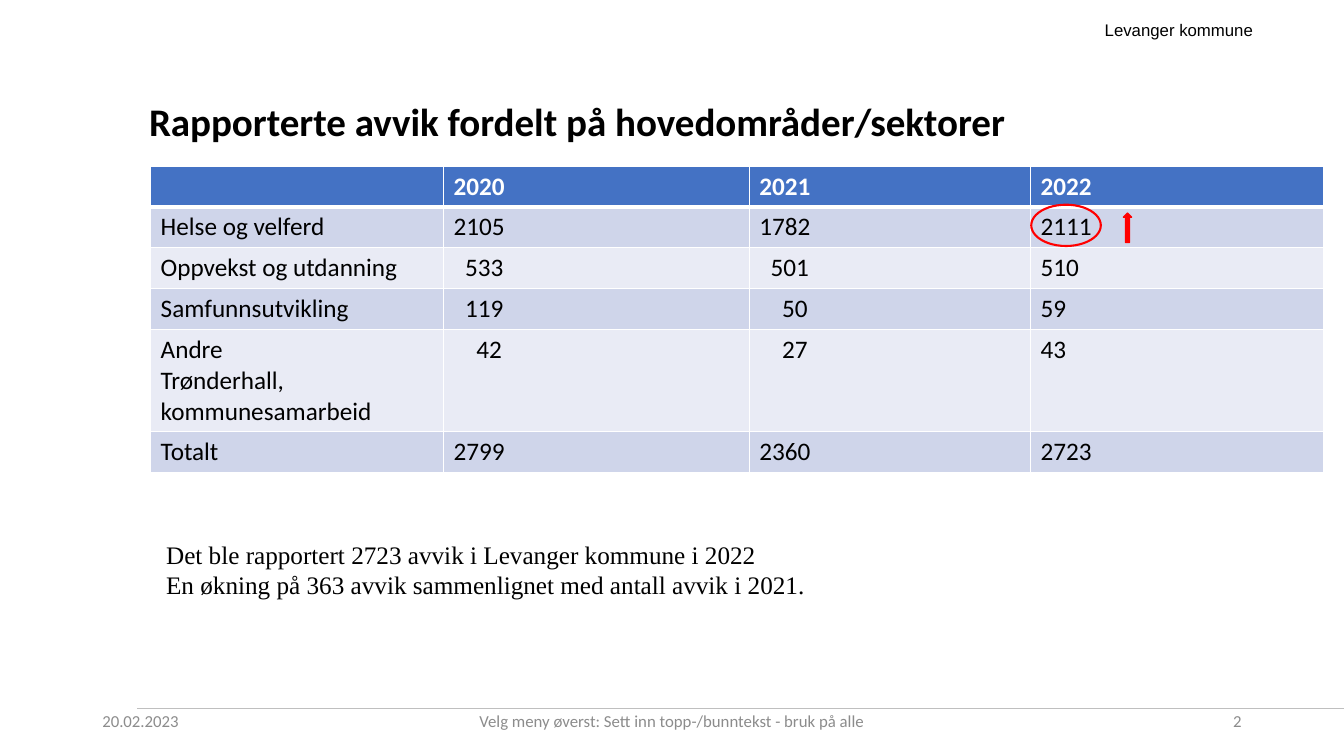
from dataclasses import dataclass

from lxml import etree
from pptx import Presentation
from pptx import util as u
from pptx.dml import color
from pptx.enum import shapes, text
from pptx.oxml import ns


@dataclass(frozen=True)
class Theme:
    black: str = "000000"
    white: str = "FFFFFF"
    header: str = "4472C4"
    bands: tuple[str, str] = ("CFD5EA", "E9EBF5")
    rule: str = "BFBFBF"
    footer: str = "8C8C8C"
    accent: str = "FF0000"
    title_size: float = 27.9
    body_size: float = 18
    small_size: float = 12


THEME = Theme()


@dataclass(frozen=True)
class Style:
    size: float
    ink: str = THEME.black
    font: str = "Calibri"
    bold: bool = False


@dataclass(frozen=True)
class TextBox:
    lines: tuple[str, ...]
    box: tuple[float, float, float, float]
    style: Style
    align: text.PP_ALIGN = text.PP_ALIGN.LEFT
    anchor: text.MSO_ANCHOR = text.MSO_ANCHOR.TOP
    inset_y: float = 3.6
    spacing: float = 1.0


@dataclass(frozen=True)
class Marker:
    kind: shapes.MSO_SHAPE
    box: tuple[float, float, float, float]
    line_width: float
    filled: bool = False
    rotation: float = 0


@dataclass(frozen=True)
class Row:
    label: tuple[str, ...]
    values: tuple[str, str, str]
    height: float = 29.2


def points(values):
    return [u.Pt(value) for value in values]


def rgb(code: str) -> color.RGBColor:
    return color.RGBColor.from_string(code)


def write(frame, lines: tuple[str, ...], style: Style, align=text.PP_ALIGN.LEFT, spacing: float = 1.0) -> None:
    for index, line in enumerate(lines):
        paragraph = frame.add_paragraph() if index else frame.paragraphs[0]
        paragraph.alignment = align
        paragraph.line_spacing = spacing
        run = paragraph.add_run()
        run.text = line
        run.font.name = style.font
        run.font.size = u.Pt(style.size)
        run.font.bold = style.bold
        run.font.color.rgb = rgb(style.ink)


def add_text(slide, item: TextBox) -> None:
    frame = slide.shapes.add_textbox(*points(item.box)).text_frame
    frame.word_wrap = True
    frame.vertical_anchor = item.anchor
    frame.margin_top = frame.margin_bottom = u.Pt(item.inset_y)
    write(frame, item.lines, item.style, item.align, item.spacing)


def add_marker(slide, marker: Marker) -> None:
    shape = slide.shapes.add_shape(marker.kind, *points(marker.box))
    shape.shadow.inherit = False
    shape.rotation = marker.rotation
    shape.line.color.rgb = rgb(THEME.accent)
    shape.line.width = u.Pt(marker.line_width)
    if marker.filled:
        shape.fill.solid()
        shape.fill.fore_color.rgb = rgb(THEME.accent)
    else:
        shape.fill.background()


def set_borders(cell, top: float, bottom: float) -> None:
    properties = cell._tc.get_or_add_tcPr()
    widths = {"lnL": 1, "lnR": 1, "lnT": top, "lnB": bottom}
    for index, (side, width) in enumerate(widths.items()):
        line = etree.Element(ns.qn(f"a:{side}"), w=str(u.Pt(width)))
        fill = etree.SubElement(line, ns.qn("a:solidFill"))
        etree.SubElement(fill, ns.qn("a:srgbClr"), val=THEME.white)
        properties.insert(index, line)


def add_deviation_table(slide, left: float, top: float, columns: tuple[float, ...], rows: tuple[Row, ...]) -> None:
    heights = [row.height for row in rows]
    table = slide.shapes.add_table(
        len(rows), len(columns), *points((left, top, sum(columns), sum(heights)))).table
    for column, width in zip(table.columns, columns):
        column.width = u.Pt(width)
    digit_width = 4.07
    for row_index, row in enumerate(rows):
        table.rows[row_index].height = u.Pt(row.height)
        header = row_index == 0
        style = Style(THEME.body_size, THEME.white if header else THEME.black, bold=header)
        for column_index, lines in enumerate((row.label, *((value,) for value in row.values))):
            cell = table.cell(row_index, column_index)
            cell.fill.solid()
            cell.fill.fore_color.rgb = rgb(THEME.header if header else THEME.bands[(row_index - 1) % 2])
            set_borders(cell, top=3 if row_index == 1 else 1, bottom=3 if header else 1)
            # Shorter numbers in the first two years are indented two spaces per missing digit
            missing = 4 - len(lines[0]) if column_index in (1, 2) else 0
            cell.margin_left = u.Pt(7.2 + 2 * missing * digit_width)
            write(cell.text_frame, lines, style)


def add_rule(slide, left: float, right: float, y: float) -> None:
    rule = slide.shapes.add_connector(shapes.MSO_CONNECTOR.STRAIGHT, *points((left, y, right, y)))
    rule.line.color.rgb = rgb(THEME.rule)
    rule.line.width = u.Pt(0.25)
    etree.SubElement(rule._element.spPr, ns.qn("a:effectLst"))


SMALL = Style(THEME.small_size, THEME.footer)
MIDDLE = text.MSO_ANCHOR.MIDDLE
FOOTER_TOP, FOOTER_HEIGHT = 500.4, 28.8

HEADINGS = (
    TextBox(("Levanger kommune",), (782, 14.2, 173.5, 30), Style(THEME.small_size, font="Arial"), inset_y=0),
    TextBox(("Rapporterte avvik fordelt på hovedområder/sektorer",), (99.4, 35.3, 810.7, 68),
            Style(THEME.title_size, bold=True), anchor=text.MSO_ANCHOR.BOTTOM, inset_y=0, spacing=0.9),
)
ROWS = (
    Row((), ("2020", "2021", "2022")),
    Row(("Helse og velferd",), ("2105", "1782", "2111")),
    Row(("Oppvekst og utdanning",), ("533", "501", "510")),
    Row(("Samfunnsutvikling",), ("119", "50", "59")),
    Row(("Andre", "Trønderhall, kommunesamarbeid"), ("42", "27", "43"), 73.1),
    Row(("Totalt",), ("2799", "2360", "2723")),
)
FOOTERS = (
    TextBox(("20.02.2023",), (66, FOOTER_TOP, 216, FOOTER_HEIGHT), SMALL, anchor=MIDDLE),
    TextBox(("Velg meny øverst: Sett inn topp-/bunntekst - bruk på alle",),
            (318, FOOTER_TOP, 324, FOOTER_HEIGHT), SMALL, text.PP_ALIGN.CENTER, MIDDLE),
    TextBox(("2",), (678, FOOTER_TOP, 216, FOOTER_HEIGHT), SMALL, text.PP_ALIGN.RIGHT, MIDDLE),
)
MARKERS = (
    Marker(shapes.MSO_SHAPE.RIGHT_ARROW, (794.9, 159.8, 20.9, 5.8), 1, filled=True, rotation=270),
    Marker(shapes.MSO_SHAPE.OVAL, (736.6, 146.2, 49.7, 29.5), 1.5),
)
SUMMARY = TextBox(
    ("Det ble rapportert 2723 avvik i Levanger kommune i 2022",
     "En økning på 363 avvik sammenlignet med antall avvik i 2021."),
    (111.6, 381.6, 736.6, 51), Style(THEME.body_size, font="Times New Roman"))


def main() -> None:
    presentation = Presentation()
    presentation.slide_width, presentation.slide_height = points((960, 540))
    slide = presentation.slides.add_slide(presentation.slide_layouts[6])

    # Footer rule, organisation name and title
    add_rule(slide, 97.9, 960, 506.2)
    for heading in HEADINGS:
        add_text(slide, heading)

    # Reported deviations by sector and year
    add_deviation_table(slide, 107.6, 118.6, (209.3, 218.3, 200.9, 209.3), ROWS)

    # Footer fields
    for footer in FOOTERS:
        add_text(slide, footer)

    # Highlighted increase and summary
    for marker in MARKERS:
        add_marker(slide, marker)
    add_text(slide, SUMMARY)

    presentation.save("out.pptx")


if __name__ == "__main__":
    main()
